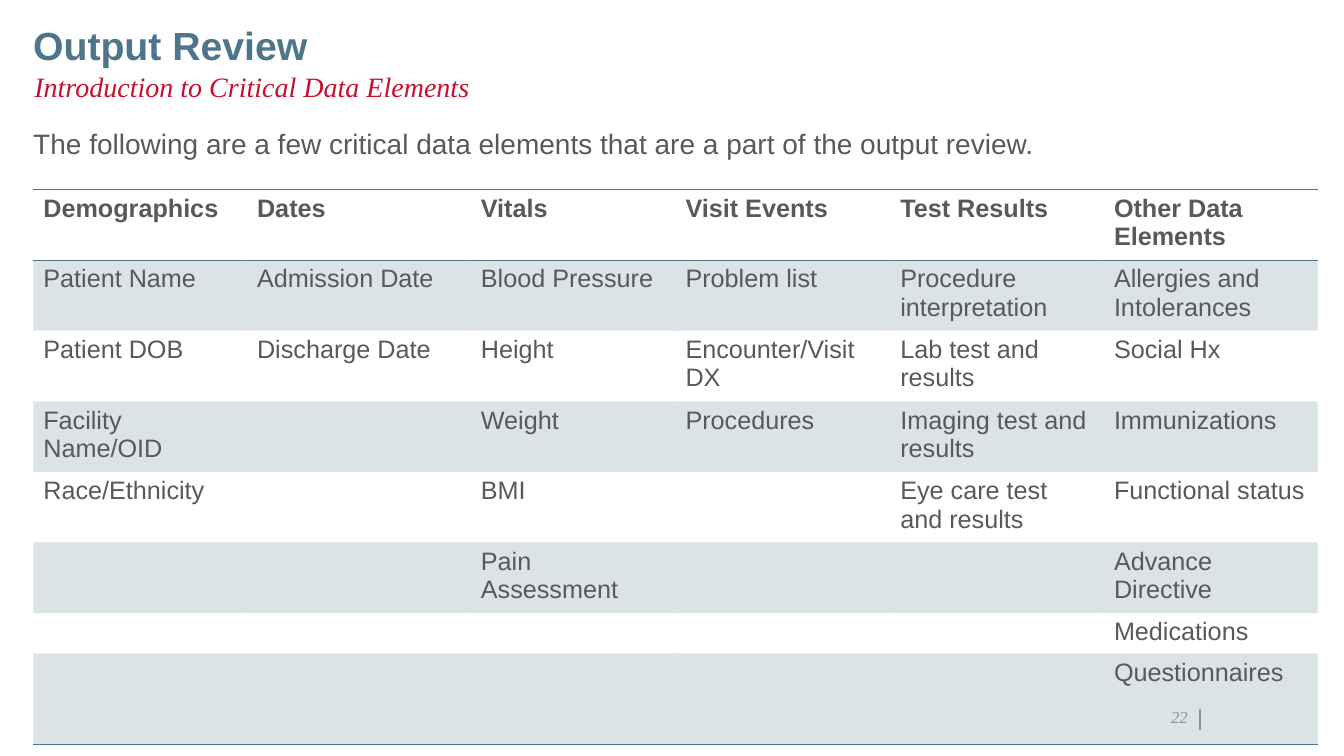
from dataclasses import dataclass

from lxml import etree
from pptx import Presentation
from pptx.dml.color import RGBColor
from pptx.enum.shapes import MSO_CONNECTOR
from pptx.enum.text import MSO_ANCHOR, PP_ALIGN
from pptx.oxml.ns import qn
from pptx.util import Inches, Pt

STRAIGHT = MSO_CONNECTOR.STRAIGHT
TOP, BOTTOM = MSO_ANCHOR.TOP, MSO_ANCHOR.BOTTOM
LEFT, RIGHT = PP_ALIGN.LEFT, PP_ALIGN.RIGHT
NO_STYLE = "{2D5ABB26-0587-4C30-8999-92F81FD0307C}"


@dataclass(frozen=True)
class Theme:
    """Colours, fonts and type sizes of the slide."""
    accent: str = "4F758B"
    red: str = "C8102E"
    body: str = "565A5C"
    muted: str = "989D9F"
    sans: str = "Arial"
    serif: str = "Times New Roman"
    title_size: int = 28
    lead_size: int = 20
    cell_size: int = 18
    number_size: int = 12
    band_alpha: int = 20
    rule: int = 1


THEME = Theme()
MARGIN = 0.33
COLUMNS = [2.12, 2.22, 2.03, 2.13, 2.12, 2.12]
ROWS = [0.64] * 6 + [0.37, 0.9]
DATA = [
    ["Demographics", "Dates", "Vitals", "Visit Events", "Test Results", "Other Data Elements"],
    ["Patient Name", "Admission Date", "Blood Pressure", "Problem list",
     "Procedure interpretation", "Allergies and Intolerances"],
    ["Patient DOB", "Discharge Date", "Height", "Encounter/Visit DX",
     "Lab test and results", "Social Hx"],
    ["Facility Name/OID", "", "Weight", "Procedures", "Imaging test and results", "Immunizations"],
    ["Race/Ethnicity", "", "BMI", "", "Eye care test and results", "Functional status"],
    ["", "", "Pain Assessment", "", "", "Advance Directive"],
    ["", "", "", "", "", "Medications"],
    ["", "", "", "", "", "Questionnaires"],
]


def style(p, size, color, face=THEME.sans, bold=False, italic=False):
    """Set the font of a whole paragraph."""
    font = p.font
    font.name, font.size, font.bold, font.italic = face, Pt(size), bold, italic
    font.color.rgb = RGBColor.from_string(color)


def add_text(s, box, text, size, color, spacing=1.0, anchor=TOP, align=LEFT, **look):
    """Add a text box without insets that holds one paragraph."""
    tf = s.shapes.add_textbox(*map(Inches, box)).text_frame
    tf.word_wrap = True
    tf.vertical_anchor = anchor
    tf.margin_left = tf.margin_right = tf.margin_top = tf.margin_bottom = 0
    p = tf.paragraphs[0]
    p.text, p.alignment, p.line_spacing = text, align, spacing
    style(p, size, color, **look)


def add_header(s, left, top, width):
    """Place the title, subtitle and lead sentence."""
    add_text(s, (left, top, width, 0.41), "Output Review", THEME.title_size,
             THEME.accent, spacing=0.9, bold=True)
    add_text(s, (left + 0.01, top + 0.47, width, 0.36), "Introduction to Critical Data Elements",
             THEME.lead_size, THEME.red, spacing=0.9, face=THEME.serif, italic=True)
    add_text(s, (left, top + 0.99, 11.86, 1.68),
             "The following are a few critical data elements that are a part of the output review.",
             THEME.lead_size, THEME.body)


def add_page_number(s, left, top, width, height):
    """Place the page number and the short rule at its right."""
    x = left + width
    line = s.shapes.add_connector(STRAIGHT, *map(Inches, (x, top, x, top + height)))
    line.line.color.rgb = RGBColor.from_string(THEME.muted)
    line.line.width = Pt(THEME.rule)
    etree.SubElement(line._element.spPr, qn("a:effectLst"))
    add_text(s, (left, top, width - 0.12, 0.18), "22", THEME.number_size, THEME.muted,
             anchor=BOTTOM, align=RIGHT, face=THEME.serif, italic=True)


def set_borders(cell, sides):
    """Draw rules on the given sides of a cell, in the order T, B."""
    tc_pr = cell._tc.get_or_add_tcPr()
    for i, side in enumerate(sides):
        ln = etree.Element(qn(f"a:ln{side}"), w=str(Pt(THEME.rule)))
        fill = etree.SubElement(ln, qn("a:solidFill"))
        etree.SubElement(fill, qn("a:srgbClr"), val=THEME.accent)
        tc_pr.insert(i, ln)


def fill_cell(cell, banded):
    """Give a cell the translucent band colour or no fill."""
    if not banded:
        cell.fill.background()
        return
    cell.fill.solid()
    cell.fill.fore_color.rgb = RGBColor.from_string(THEME.accent)
    color = cell._tc.tcPr.find(f".//{qn('a:srgbClr')}")
    etree.SubElement(color, qn("a:alpha"), val=str(THEME.band_alpha * 1000))


def add_data_table(s, left, top):
    """Place the table of data elements with banded rows."""
    box = (left, top, sum(COLUMNS), sum(ROWS))
    table = s.shapes.add_table(len(ROWS), len(COLUMNS), *map(Inches, box)).table
    table.horz_banding = False
    table._tbl.tblPr.find(qn("a:tableStyleId")).text = NO_STYLE
    for column, width in zip(table.columns, COLUMNS):
        column.width = Inches(width)
    borders = {0: "TB", len(ROWS) - 1: "B"}
    for r, (height, texts) in enumerate(zip(ROWS, DATA)):
        table.rows[r].height = Inches(height)
        for c, text in enumerate(texts):
            cell = table.cell(r, c)
            p = cell.text_frame.paragraphs[0]
            p.text = text
            style(p, THEME.cell_size, THEME.body, bold=r == 0)
            fill_cell(cell, r % 2 == 1)
            set_borders(cell, borders.get(r, ""))


def main():
    """Build the slide and save it."""
    prs = Presentation()
    prs.slide_width, prs.slide_height = Inches(13.33), Inches(7.5)
    s = prs.slides.add_slide(prs.slide_layouts[6])
    add_page_number(s, 10.99, 7.03, 0.91, 0.21)
    add_header(s, MARGIN, 0.26, 13.33 - 2 * MARGIN)
    add_data_table(s, MARGIN, 1.88)
    prs.save("out.pptx")


if __name__ == "__main__":
    main()
